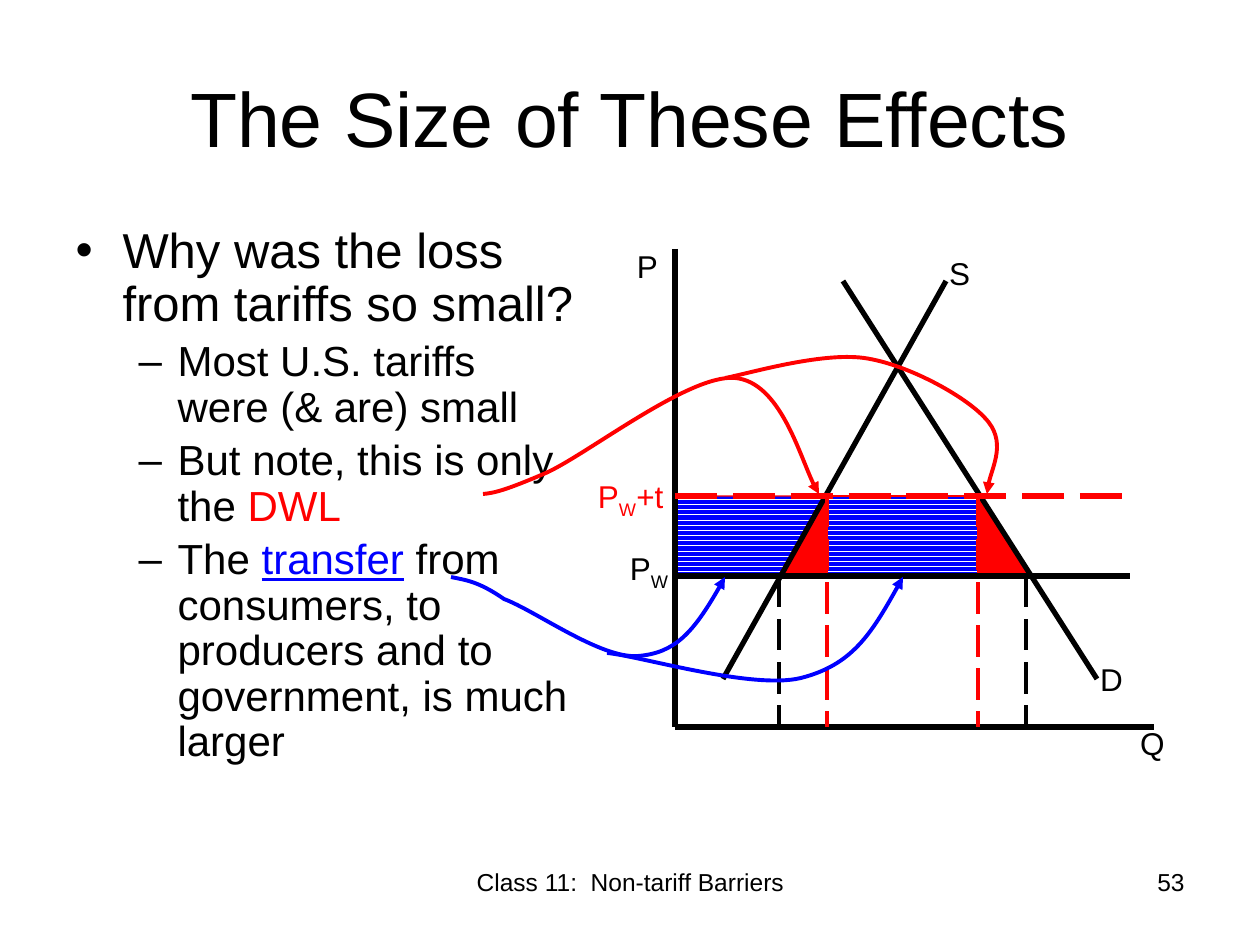
from dataclasses import dataclass

from lxml import etree
from pptx import Presentation
from pptx.dml.color import RGBColor
from pptx.enum.dml import MSO_LINE, MSO_PATTERN
from pptx.enum.shapes import MSO_CONNECTOR
from pptx.enum.text import MSO_ANCHOR, MSO_AUTO_SIZE, PP_ALIGN
from pptx.oxml.ns import qn
from pptx.util import Pt

LEFT, CENTER, RIGHT = PP_ALIGN.LEFT, PP_ALIGN.CENTER, PP_ALIGN.RIGHT
TOP, MIDDLE = MSO_ANCHOR.TOP, MSO_ANCHOR.MIDDLE
DASH = MSO_LINE.LONG_DASH
STRIPES = MSO_PATTERN.DARK_HORIZONTAL
STRAIGHT = MSO_CONNECTOR.STRAIGHT
NO_FIT = MSO_AUTO_SIZE.NONE
SCALE = 914400 / 126


@dataclass(frozen=True)
class Theme:
    face: str = "Arial"
    ink: RGBColor = RGBColor(0, 0, 0)
    loss: RGBColor = RGBColor(255, 0, 0)
    shift: RGBColor = RGBColor(0, 0, 255)
    paper: RGBColor = RGBColor(255, 255, 255)
    title: int = 44
    lead: int = 28
    point: int = 24
    label: int = 18
    foot: int = 14
    thick: float = 3
    medium: float = 2.25
    thin: float = 0.75


THEME = Theme()


def px(size):
    return round(size * SCALE)


def place(shape, box):
    shape.left, shape.top, shape.width, shape.height = map(px, box)


def style(run, size, color=THEME.ink):
    run.font.name = THEME.face
    run.font.size = Pt(size)
    run.font.color.rgb = color


def add_text(shapes, box, text, size, align=LEFT, color=THEME.ink):
    shape = shapes.add_textbox(*map(px, box))
    frame = shape.text_frame
    frame.word_wrap = True
    frame.text = text
    frame.paragraphs[0].alignment = align
    style(frame.paragraphs[0].runs[0], size, color)
    return frame


def add_title(slide, box):
    title = slide.shapes.title
    place(title, box)
    frame = title.text_frame
    frame.text = "The Size of These Effects"
    frame.auto_size = NO_FIT
    frame.vertical_anchor = MIDDLE
    frame.paragraphs[0].alignment = CENTER
    style(frame.paragraphs[0].runs[0], THEME.title)


def set_bullet(para, mark, margin, hang):
    props = para._p.get_or_add_pPr()
    props.set("marL", str(px(margin)))
    props.set("indent", str(-px(hang)))
    etree.SubElement(props, qn("a:buFont")).set("typeface", THEME.face)
    etree.SubElement(props, qn("a:buChar")).set("char", mark)


def add_body(slide, box):
    items = (
        (0, [("Why was the loss from tariffs so small?", THEME.ink)]),
        (1, [("Most U.S. tariffs were (& are) small", THEME.ink)]),
        (1, [("But note, this is only the ", THEME.ink), ("DWL", THEME.loss)]),
        (1, [
            ("The ", THEME.ink),
            ("transfer", THEME.shift),
            (" from consumers, to producers and to government, is much larger", THEME.ink),
        ]),
    )
    levels = ((THEME.lead, "•", 47, 47), (THEME.point, "–", 102, 39))
    body = slide.placeholders[1]
    place(body, box)
    frame = body.text_frame
    frame.auto_size = NO_FIT
    frame.vertical_anchor = TOP
    for index, (level, parts) in enumerate(items):
        para = frame.add_paragraph() if index else frame.paragraphs[0]
        size, *bullet = levels[level]
        para.level = level
        para.alignment = LEFT
        para.line_spacing = 0.9
        para.space_before = Pt(size * 0.2)
        set_bullet(para, *bullet)
        for text, color in parts:
            run = para.add_run()
            run.text = text
            style(run, size, color)
            if color == THEME.shift:
                run.font.underline = True


def add_line(shapes, origin, start, end, color, width, dash=None):
    left, top = origin
    ends = (left + start[0], top + start[1], left + end[0], top + end[1])
    line = shapes.add_connector(STRAIGHT, *map(px, ends))
    line.line.color.rgb = color
    line.line.width = Pt(width)
    line.line.dash_style = dash
    etree.SubElement(line._element.spPr, qn("a:effectLst"))


def add_path(shapes, origin, points, color, width, close):
    pen = shapes.build_freeform(*points[0], scale=SCALE)
    pen.add_line_segments(points[1:], close=close)
    shape = pen.convert_to_shape(*map(px, origin))
    shape.shadow.inherit = False
    shape.line.color.rgb = color
    shape.line.width = Pt(width)
    return shape


def add_area(shapes, origin, points, striped):
    fill = add_path(shapes, origin, points, THEME.loss, THEME.thin, True).fill
    if striped:
        fill.patterned()
        fill.pattern = STRIPES
        fill.fore_color.rgb = THEME.shift
        fill.back_color.rgb = THEME.paper
    else:
        fill.solid()
        fill.fore_color.rgb = THEME.loss


def add_curve(shapes, origin, points, color):
    shape = add_path(shapes, origin, points, color, THEME.medium, False)
    shape.fill.background()
    steps = list(shape._element.iter(qn("a:lnTo")))
    track = steps[0].getparent()
    for start in range(0, len(steps), 3):
        bend = etree.SubElement(track, qn("a:cubicBezTo"))
        for step in steps[start:start + 3]:
            bend.append(step[0])
            track.remove(step)
    tail = etree.SubElement(shape.line._get_or_add_ln(), qn("a:tailEnd"))
    tail.set("type", "triangle")


def add_label(shapes, origin, spot, width, text, sub="", rest="", color=THEME.ink):
    box = (origin[0] + spot[0], origin[1] + spot[1], width, 45)
    frame = add_text(shapes, box, text, THEME.label, color=color)
    frame.margin_left = frame.margin_right = px(10)
    frame.margin_top = frame.margin_bottom = px(5)
    for part, base in ((sub, "-25000"), (rest, "0")):
        if part:
            run = frame.paragraphs[0].add_run()
            run.text = part
            style(run, THEME.label, color)
            run._r.get_or_add_rPr().set("baseline", base)


def add_graph(slide, box):
    left, top, width, height = box
    origin = left, top
    shapes = slide.shapes.add_group_shape().shapes
    ink, loss = THEME.ink, THEME.loss
    high, low, reach = 247, 327, 455
    make, grow, shrink, buy = 104, 152, 303, 354

    add_area(shapes, origin, [(shrink, high), (shrink, low), (buy, low)], False)
    add_area(shapes, origin, [(grow, high), (grow, low), (shrink, low), (shrink, high)], True)
    add_area(shapes, origin, [(0, high), (0, low), (make, low), (grow, high)], True)
    add_area(shapes, origin, [(grow, high), (grow, low), (make, low)], False)

    for start, end in (
        ((0, 0), (0, height)),
        ((0, height), (width, height)),
        ((271, 32), (48, 430)),
        ((168, 32), (422, 430)),
        ((0, low), (reach, low)),
    ):
        add_line(shapes, origin, start, end, ink, THEME.thick)
    add_line(shapes, origin, (0, high), (reach, high), loss, THEME.thick, DASH)
    for x, y, color in ((make, low, ink), (351, low, ink), (grow, high, loss), (shrink, high, loss)):
        add_line(shapes, origin, (x, y), (x, height), color, THEME.medium, DASH)

    add_label(shapes, origin, (264, 0), 55, "S")
    add_label(shapes, origin, (415, 406), 55, "D")
    add_label(shapes, origin, (455, 470), 55, "Q")
    add_label(shapes, origin, (-48, -7), 64, "P")
    add_label(shapes, origin, (-55, 295), 64, "P", "W")
    add_label(shapes, origin, (-87, 223), 103, "P", "W", "+t", loss)


def add_arrows(slide, origin):
    curves = (
        (THEME.loss, [(33, 144), (44, 143), (54, 141), (96, 123), (138, 104),
                      (239, 24), (285, 28), (330, 32), (355, 124), (369, 144)]),
        (THEME.loss, [(275, 28), (297, 24), (370, 2), (414, 8), (457, 14),
                      (515, 46), (535, 68), (557, 91), (537, 128), (537, 144)]),
        (THEME.shift, [(1, 227), (15, 230), (28, 231), (54, 249), (86, 261),
                       (151, 309), (188, 306), (225, 303), (246, 280), (275, 227)]),
        (THEME.shift, [(157, 303), (190, 306), (302, 340), (351, 328),
                       (402, 315), (424, 280), (453, 227)]),
    )
    for color, points in curves:
        add_curve(slide.shapes, origin, points, color)


def add_footer(slide, box):
    left, top, width, height = box
    add_text(slide.shapes, (left, top, 399, height),
             "Class 11:  Non-tariff Barriers", THEME.foot, CENTER)
    add_text(slide.shapes, (left + width - 294, top, 294, height), "53", THEME.foot, RIGHT)


def main():
    deck = Presentation()
    deck.slide_width, deck.slide_height = px(1260), px(945)
    slide = deck.slides.add_slide(deck.slide_layouts[1])
    add_footer(slide, (431, 861, 766, 66))
    add_title(slide, (63, 38, 1134, 157))
    add_body(slide, (63, 220, 525, 624))
    add_graph(slide, (675, 249, 479, 478))
    add_arrows(slide, (450, 350))
    deck.save("out.pptx")


if __name__ == "__main__":
    main()
